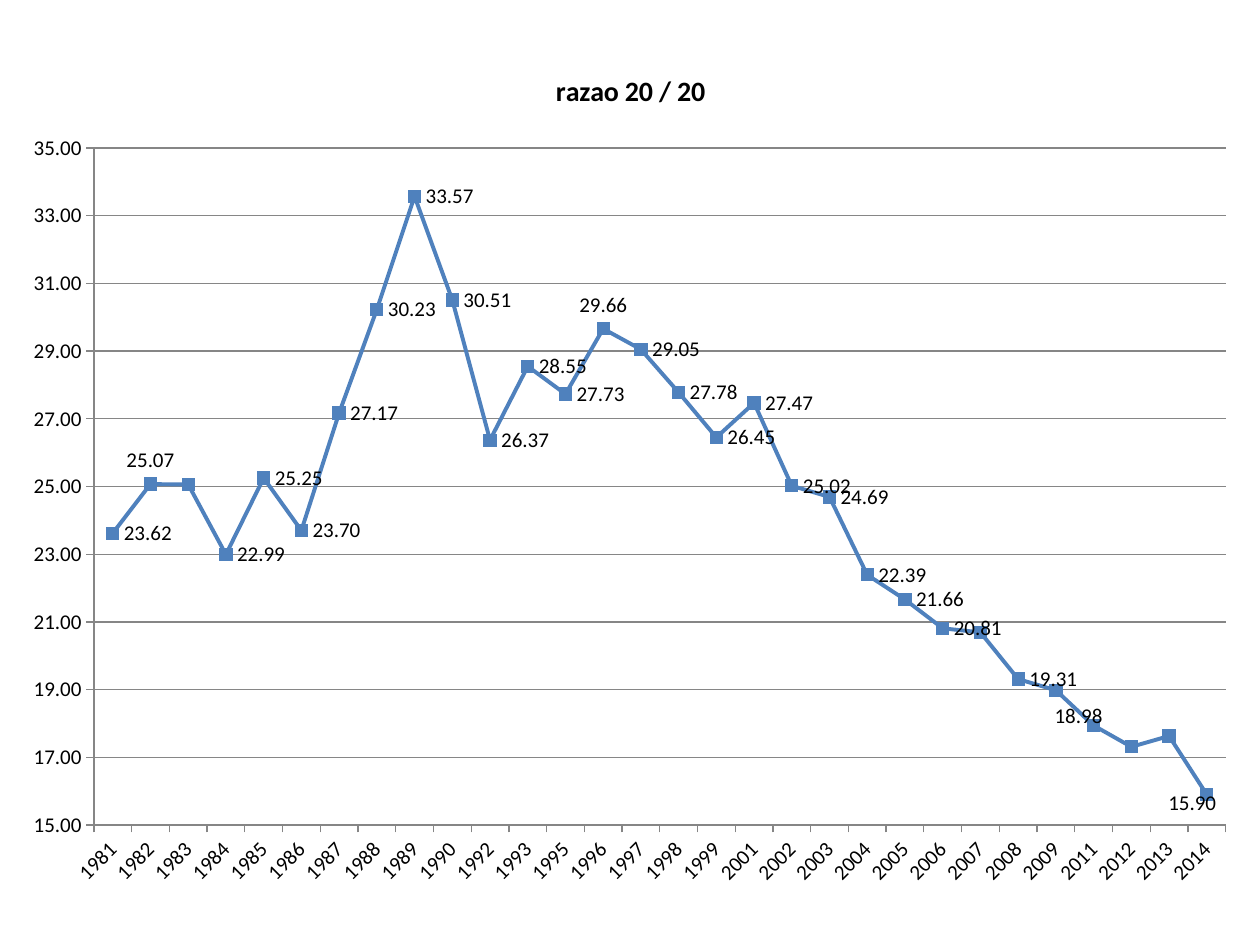
from lxml import etree
from pptx import Presentation
from pptx.chart.data import CategoryChartData
from pptx.dml.color import RGBColor
from pptx.enum import chart as ch
from pptx.oxml.ns import qn
from pptx.util import Inches, Pt


def color(value):
    return RGBColor.from_string(value)


def add_layout(parent, index, **settings):
    """Insert a manual chart layout as a child of parent."""
    layout = etree.Element(qn("c:layout"))
    manual = etree.SubElement(layout, qn("c:manualLayout"))
    for tag, value in settings.items():
        etree.SubElement(manual, qn("c:" + tag)).set("val", str(value))
    parent.insert(index, layout)


prs = Presentation()
prs.slide_width, prs.slide_height = Inches(10), Inches(7.5)
s = prs.slides.add_slide(prs.slide_layouts[6])

# Ratio by year; some years have no survey
missing = {1991, 1994, 2000, 2010}
years = [y for y in range(1981, 2015) if y not in missing]
ratios = [23.62, 25.07, 25.06, 22.99, 25.25, 23.7, 27.17, 30.23, 33.57, 30.51,
          26.37, 28.55, 27.73, 29.66, 29.05, 27.78, 26.45, 27.47, 25.02, 24.69,
          22.39, 21.66, 20.81, 20.69, 19.31, 18.98, 17.94, 17.31, 17.63, 15.9]
data = CategoryChartData(number_format="#,##0.00")
data.categories = [str(y) for y in years]
data.add_series("razao 20 / 20", ratios)

# Chart
chart = s.shapes.add_chart(ch.XL_CHART_TYPE.LINE_MARKERS, Inches(0.08), Inches(0.34),
                           Inches(9.85), Inches(6.82), data).chart
chart.has_legend = False
chart.font.name = "Calibri"
chart.font.size = Pt(12)
chart.font.color.rgb = color("000000")

# Title
chart.has_title = True
tf = chart.chart_title.text_frame
tf.text = "razao 20 / 20"
font = tf.paragraphs[0].runs[0].font
font.name, font.size, font.bold = "Calibri", Pt(16), True
font.color.rgb = color("000000")
chart.chart_title.include_in_layout = False

# Plot area
plot_area = chart._chartSpace.find(".//" + qn("c:plotArea"))
for old in plot_area.findall(qn("c:layout")):
    plot_area.remove(old)
add_layout(plot_area, 0, layoutTarget="inner", xMode="edge", yMode="edge",
           x=0.0676, y=0.1224, w=0.912, h=0.788)

# Axes
cat, val = chart.category_axis, chart.value_axis
for axis in (cat, val):
    axis.major_tick_mark = ch.XL_TICK_MARK.OUTSIDE
    axis.minor_tick_mark = ch.XL_TICK_MARK.NONE
    axis.format.line.color.rgb = color("868686")
    axis.format.line.width = Pt(0.75)
    axis.tick_labels.font.size = Pt(12)
cat.has_major_gridlines = False
cat._element.find(qn("c:txPr")).find(qn("a:bodyPr")).set("rot", "-2700000")
val.minimum_scale, val.maximum_scale, val.major_unit = 15, 35, 2
val.has_major_gridlines = True
val.major_gridlines.format.line.color.rgb = color("868686")
val.major_gridlines.format.line.width = Pt(0.75)
val.tick_labels.number_format = "#,##0.00"
val.tick_labels.number_format_is_linked = False

# Line and markers
chart.plots[0].vary_by_categories = False
ser = chart.plots[0].series[0]
ser.smooth = False
ser.format.line.color.rgb = color("4F81BD")
ser.format.line.width = Pt(2.25)
ser.marker.style = ch.XL_MARKER_STYLE.SQUARE
ser.marker.size = 7
ser.marker.format.fill.solid()
ser.marker.format.fill.fore_color.rgb = color("4F81BD")
ser.marker.format.line.color.rgb = color("4F81BD")

# Value labels: to the right, with some moved and some hidden
labels = ser.data_labels
labels.show_value = True
labels.position = ch.XL_LABEL_POSITION.RIGHT
labels.number_format = "#,##0.00"
labels.number_format_is_linked = False

for year in (1982, 1996):
    ser.points[years.index(year)].data_label.position = ch.XL_LABEL_POSITION.ABOVE

shifts = {2009: (-0.01, 0.03), 2014: (-0.04, 0.01)}
hidden = (1983, 2007, 2011, 2012, 2013)
for year in (*shifts, *hidden):
    i = years.index(year)
    ser.points[i].data_label.position = ch.XL_LABEL_POSITION.RIGHT
    label = next(d for d in labels._element.findall(qn("c:dLbl"))
                 if d.find(qn("c:idx")).get("val") == str(i))
    if year in shifts:
        x, y = shifts[year]
        add_layout(label, 1, x=x, y=y)
    else:
        for child in list(label)[1:]:
            label.remove(child)
        etree.SubElement(label, qn("c:delete")).set("val", "1")

prs.save("out.pptx")
